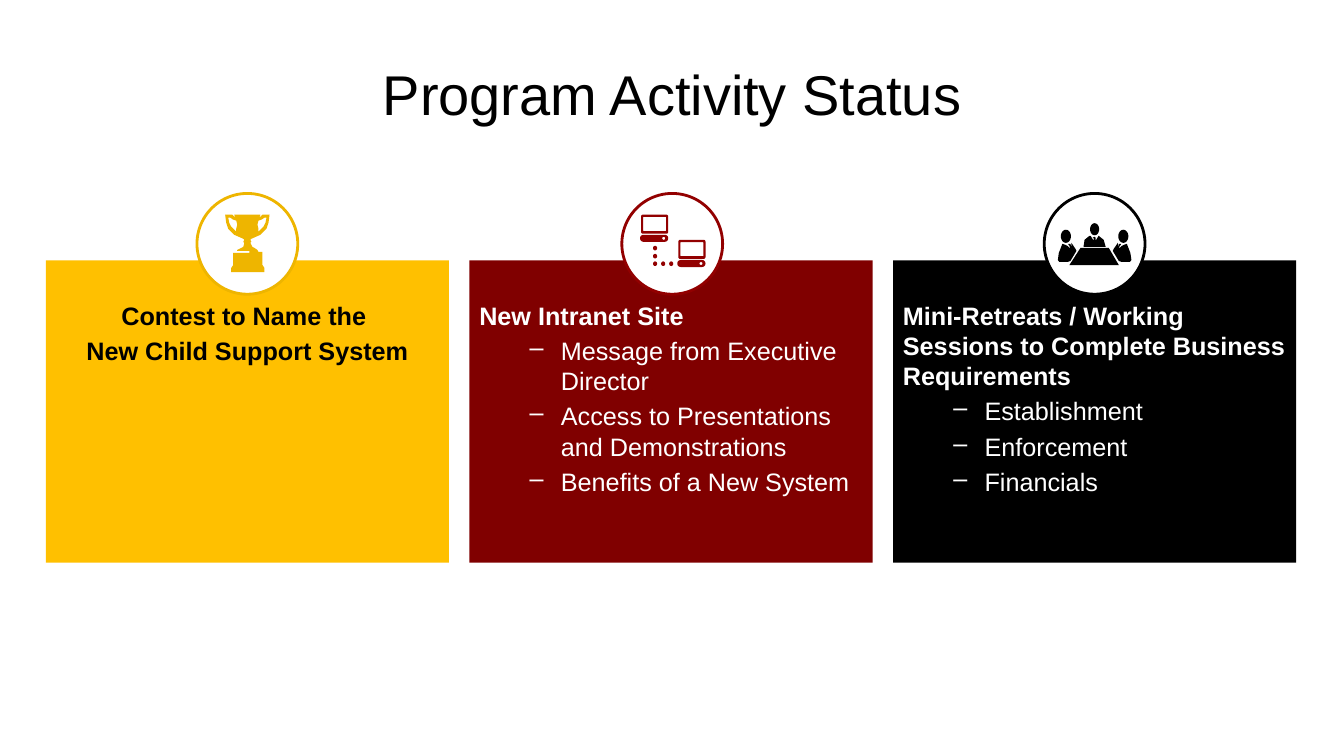
from math import cos, radians, sin

from lxml import etree
from pptx import Presentation
from pptx.dml.color import RGBColor
from pptx.enum.shapes import MSO_SHAPE
from pptx.enum.text import MSO_ANCHOR, PP_ALIGN
from pptx.oxml.ns import qn
from pptx.util import Pt

RECTANGLE, OVAL = MSO_SHAPE.RECTANGLE, MSO_SHAPE.OVAL
LEFT, CENTER = PP_ALIGN.LEFT, PP_ALIGN.CENTER
TOP, MIDDLE = MSO_ANCHOR.TOP, MSO_ANCHOR.MIDDLE

COLORS = {"white": "FFFFFF", "black": "000000", "amber": "FFC000",
          "gold": "EEB500", "maroon": "800000", "crimson": "920000"}
FONT = "Arial"
CARD_LEFT, CARD_TOP, CARD_WIDTH, CARD_HEIGHT = 32.7, 186, 288, 216
CARD_PITCH = 302.6
DISC_SIZE, DISC_RISE = 72, 47.8

# Icon outlines, in hundredths of the disc they sit on
TROPHY = [(53, 49), (55, 53), (57, 54), (60, 56), (61, 58), (65, 58), (65, 71), (67, 74),
          (67, 78), (34, 78), (34, 74), (36, 71), (36, 59), (52, 59), (52, 57), (40, 57),
          (40, 56), (44, 54), (46, 53), (47, 49), (46, 48), (47, 46), (46, 45), (37, 41),
          (31, 35), (29, 29), (28, 21), (35, 21), (36, 22), (38, 24), (37, 21), (63, 21),
          (62, 24), (64, 22), (65, 21), (72, 21), (71, 29), (69, 35), (63, 41), (54, 45),
          (53, 46), (54, 48)]
HANDLE_GAP = [(39, 27), (36, 26), (33, 24), (31, 24), (32, 29), (34, 33), (39, 38),
              (39, 35), (40, 31)]
SEATED_BODY = [(27, 49), (31, 55), (32, 57), (26, 67), (23, 68), (15, 68), (13.5, 66),
               (14.5, 59), (18, 50), (21, 51), (23, 52), (26, 55), (25, 52), (24, 51),
               (24, 50), (26, 50), (27, 54)]
CHAIR_BODY = [(39, 53), (40, 46), (45, 42), (46, 42), (49, 47), (49, 44), (48, 44),
              (50, 43), (51, 44), (51, 47), (54, 42), (59, 46), (61, 53)]
TABLE_TOP = [(25, 71), (36, 54), (64, 54), (74, 71)]
NETWORK_DOTS = [(31, 52), (31, 60), (31, 67.5), (39, 67.5), (47, 67.5)]


def color(name):
    return RGBColor.from_string(COLORS[name])


def paint(shape, fill, line=None):
    shape.shadow.inherit = False
    shape.fill.solid()
    shape.fill.fore_color.rgb = color(fill)
    if line:
        shape.line.color.rgb = color(line)
        shape.line.width = Pt(2)
    else:
        shape.line.fill.background()
    return shape


def add_block(page, kind, box, fill, line=None):
    return paint(page.shapes.add_shape(kind, *[Pt(length) for length in box]), fill, line)


def write(para, text, size=18, ink="black", bold=False, align=LEFT, before=0, dash=False):
    if dash:
        properties = para._p.get_or_add_pPr()
        properties.set("marL", str(Pt(58.3)))
        properties.set("indent", str(Pt(-22.3)))
        etree.SubElement(properties, qn("a:buChar")).set("char", "–")
    para.alignment = align
    para.space_before = Pt(before)
    span = para.add_run()
    span.text = text
    span.font.name, span.font.size, span.font.bold = FONT, Pt(size), bold
    span.font.color.rgb = color(ink)


def mirror(points):
    return [(100 - x, y) for x, y in points]


def rounded(x, y, width, height, radius):
    """Outline of a rectangle whose corners are arcs."""
    corners = [(x + width - radius, y + height - radius), (x + radius, y + height - radius),
               (x + radius, y + radius), (x + width - radius, y + radius)]
    return [(center_x + radius * cos(radians(90 * turn + step)),
             center_y + radius * sin(radians(90 * turn + step)))
            for turn, (center_x, center_y) in enumerate(corners)
            for step in range(0, 91, 15)]


def ellipse(x, y, width, height):
    return [(x + width / 2 * (1 + cos(radians(angle))),
             y + height / 2 * (1 + sin(radians(angle)))) for angle in range(0, 360, 15)]


def add_outline(page, disc, fill, *contours):
    """Draw closed contours as one shape; a contour inside another cuts a hole."""
    left, top, size = disc
    builder = None
    for contour in contours:
        points = [(Pt(left + x * size / 100), Pt(top + y * size / 100)) for x, y in contour]
        if builder is None:
            builder = page.shapes.build_freeform(*points[0])
        else:
            builder.move_to(*points[0])
        builder.add_line_segments(points[1:], close=True)
    paint(builder.convert_to_shape(), fill)


def trophy_icon(page, disc, ink):
    add_outline(page, disc, ink, TROPHY, HANDLE_GAP, mirror(HANDLE_GAP))


def network_icon(page, disc, ink):
    for x, y in [(18, 21), (55, 46)]:
        add_outline(page, disc, ink,
                    rounded(x + 1, y, 27, 19, 2), rounded(x + 3, y + 2.3, 23, 14, 0.7),
                    rounded(x, y + 20, 28, 7, 3.5), ellipse(x + 22, y + 22, 3, 3))
    add_outline(page, disc, ink, *[ellipse(x, y, 4, 4.5) for x, y in NETWORK_DOTS])


def meeting_icon(page, disc, ink):
    seated_head = ellipse(16.5, 36, 10, 13)
    add_outline(page, disc, ink, SEATED_BODY, seated_head, mirror(SEATED_BODY),
                mirror(seated_head), CHAIR_BODY, ellipse(45.5, 29.5, 9, 12), TABLE_TOP)


def add_title(page, box, text):
    frame = page.shapes.add_textbox(*[Pt(length) for length in box]).text_frame
    frame.word_wrap = True
    frame.vertical_anchor = MIDDLE
    write(frame.paragraphs[0], text, size=40, align=CENTER)


def add_card(page, box, card):
    left, top, width, _ = box
    frame = add_block(page, RECTANGLE, box, card["fill"]).text_frame
    frame.word_wrap = True
    frame.vertical_anchor = TOP
    frame.margin_top = Pt(28.3)
    lines = [(text, False) for text in card["heading"]]
    lines += [(text, True) for text in card["items"]]
    for index, (text, dash) in enumerate(lines):
        para = frame.add_paragraph() if index else frame.paragraphs[0]
        write(para, text, ink=card["ink"], bold=not dash, align=card["align"],
              before=3.6 if index else 0, dash=dash)

    disc_left = left + (width - DISC_SIZE) / 2 + card["disc_shift"]
    disc = (disc_left, top - DISC_RISE, DISC_SIZE)
    add_block(page, OVAL, (*disc, DISC_SIZE), "white", card["accent"])
    card["icon"](page, disc, card["accent"])


CARDS = [
    {"fill": "amber", "accent": "gold", "ink": "black", "align": CENTER,
     "icon": trophy_icon, "disc_shift": 0,
     "heading": ["Contest to Name the ", "New Child Support System"], "items": []},
    {"fill": "maroon", "accent": "crimson", "ink": "white", "align": LEFT,
     "icon": network_icon, "disc_shift": 0.9, "heading": ["New Intranet Site"],
     "items": ["Message from Executive Director",
               "Access to Presentations and Demonstrations",
               "Benefits of a New System"]},
    {"fill": "black", "accent": "black", "ink": "white", "align": LEFT,
     "icon": meeting_icon, "disc_shift": 0,
     "heading": ["Mini-Retreats / Working Sessions to Complete Business Requirements"],
     "items": ["Establishment", "Enforcement", "Financials"]},
]


def main():
    deck = Presentation()
    deck.slide_width, deck.slide_height = Pt(960), Pt(540)
    page = deck.slides.add_slide(deck.slide_layouts[6])
    add_title(page, (48, 21.6, 864, 90), "Program Activity Status")
    for index, card in enumerate(CARDS):
        left = CARD_LEFT + index * CARD_PITCH
        add_card(page, (left, CARD_TOP, CARD_WIDTH, CARD_HEIGHT), card)
    deck.save("out.pptx")


if __name__ == "__main__":
    main()
